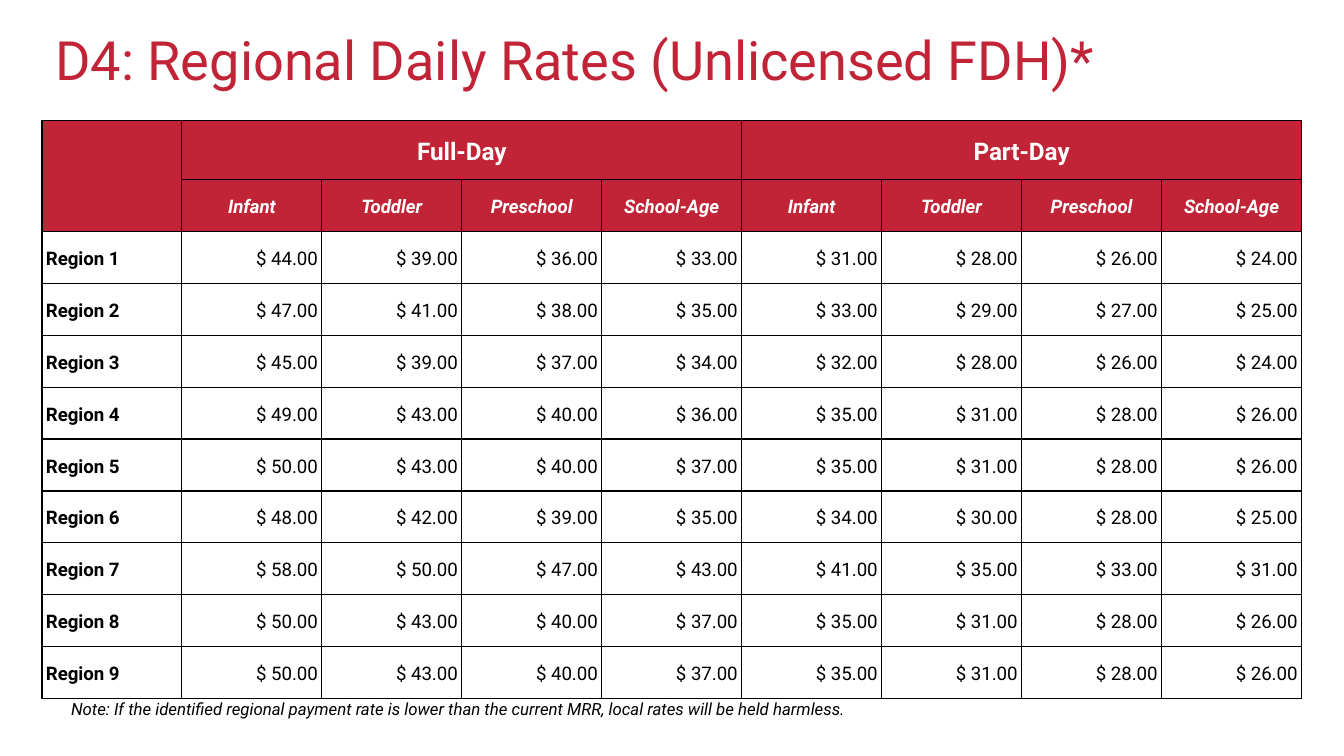
import pptx
import pptx.dml.color
import pptx.enum.text
import pptx.oxml
import pptx.oxml.ns
import pptx.util

SLIDE_WIDTH = pptx.util.Inches(10)
SLIDE_HEIGHT = SLIDE_WIDTH * 9 // 16
FONT = "Roboto"
RED, WHITE, BLACK = "C12436", "FFFFFF", "000000"
ALIGN = pptx.enum.text.PP_ALIGN
ANCHOR = pptx.enum.text.MSO_ANCHOR

DAY_TYPES = ["Full-Day", "Part-Day"]
AGE_GROUPS = ["Infant", "Toddler", "Preschool", "School-Age"]
# Daily rates by region: four full-day, then four part-day
REGION_RATES = [
    [44, 39, 36, 33, 31, 28, 26, 24],
    [47, 41, 38, 35, 33, 29, 27, 25],
    [45, 39, 37, 34, 32, 28, 26, 24],
    [49, 43, 40, 36, 35, 31, 28, 26],
    [50, 43, 40, 37, 35, 31, 28, 26],
    [48, 42, 39, 35, 34, 30, 28, 25],
    [58, 50, 47, 43, 41, 35, 33, 31],
    [50, 43, 40, 37, 35, 31, 28, 26],
    [50, 43, 40, 37, 35, 31, 28, 26],
]


def color(value):
    return pptx.dml.color.RGBColor.from_string(value)


def share_box(left, top, width, height):
    """Turn percentages of the slide into a box of lengths."""
    return (int(SLIDE_WIDTH * left / 100), int(SLIDE_HEIGHT * top / 100),
            int(SLIDE_WIDTH * width / 100), int(SLIDE_HEIGHT * height / 100))


def set_margins(target, horizontal, vertical):
    target.margin_left = target.margin_right = pptx.util.Inches(horizontal)
    target.margin_top = target.margin_bottom = pptx.util.Inches(vertical)


def write(paragraph, text, size, text_color, align=ALIGN.LEFT,
          bold=False, italic=False, spacing=None):
    paragraph.alignment = align
    paragraph.line_spacing = spacing
    run = paragraph.add_run()
    run.text = text
    run.font.name = FONT
    run.font.size = pptx.util.Pt(size)
    run.font.bold = bold
    run.font.italic = italic
    run.font.color.rgb = color(text_color)


def add_borders(cell):
    properties = cell._tc.get_or_add_tcPr()
    for side in ("lnL", "lnR", "lnT", "lnB"):
        properties.append(pptx.oxml.parse_xml(
            f'<a:{side} {pptx.oxml.ns.nsdecls("a")} w="{pptx.util.Pt(0.75)}">'
            f'<a:solidFill><a:srgbClr val="{BLACK}"/></a:solidFill></a:{side}>'))


def write_cell(cell, text, size, text_color, align, **style):
    set_margins(cell, 0.03, 0.1)
    cell.vertical_anchor = ANCHOR.BOTTOM
    write(cell.text_frame.paragraphs[0], text, size, text_color, align,
          spacing=1.15, **style)


def place_title(slide, box):
    title = slide.shapes.title
    title.left, title.top, title.width, title.height = box
    frame = title.text_frame
    frame.auto_size = pptx.enum.text.MSO_AUTO_SIZE.NONE
    frame.vertical_anchor = ANCHOR.MIDDLE
    set_margins(frame, 0.07, 0.04)
    write(frame.paragraphs[0], "D4: Regional Daily Rates (Unlicensed FDH)*",
          29, RED, spacing=0.9)


def place_rates(slide, box):
    group_size = len(AGE_GROUPS)
    column_count = 1 + len(DAY_TYPES) * group_size
    row_count = 2 + len(REGION_RATES)
    table = slide.shapes.add_table(row_count, column_count, *box).table
    table.first_row = table.horz_banding = False

    # Equal columns; the top header row is a little taller than the rest
    for column in table.columns:
        column.width = box[2] // column_count
    top_height = pptx.util.Inches(0.44)
    for index, row in enumerate(table.rows):
        row.height = (box[3] - top_height) // (row_count - 1) if index else top_height
        for cell in row.cells:
            set_margins(cell, 0, 0)
            add_borders(cell)
            if index < 2:
                cell.fill.solid()
                cell.fill.fore_color.rgb = color(RED)
            else:
                cell.fill.background()

    # Headers
    table.cell(0, 0).merge(table.cell(1, 0))
    for group, day_type in enumerate(DAY_TYPES):
        first = 1 + group * group_size
        table.cell(0, first).merge(table.cell(0, first + group_size - 1))
        write_cell(table.cell(0, first), day_type, 13, WHITE, ALIGN.CENTER, bold=True)
        for offset, age_group in enumerate(AGE_GROUPS):
            write_cell(table.cell(1, first + offset), age_group, 10, WHITE,
                       ALIGN.CENTER, bold=True, italic=True)

    # Regions and their rates
    for number, rates in enumerate(REGION_RATES, start=1):
        write_cell(table.cell(number + 1, 0), f"Region {number}", 10, BLACK,
                   ALIGN.LEFT, bold=True)
        for column, rate in enumerate(rates, start=1):
            write_cell(table.cell(number + 1, column), f"$ {rate:.2f}", 10, BLACK,
                       ALIGN.RIGHT)


def place_note(slide, box):
    frame = slide.shapes.add_textbox(*box).text_frame
    frame.word_wrap = True
    set_margins(frame, 0.1, 0.1)
    write(frame.paragraphs[0],
          "Note: If the identified regional payment rate is lower than the "
          "current MRR, local rates will be held harmless.",
          9, BLACK, italic=True)


def main():
    presentation = pptx.Presentation()
    presentation.slide_width = SLIDE_WIDTH
    presentation.slide_height = SLIDE_HEIGHT
    title_only = presentation.slide_layouts[5]
    slide = presentation.slides.add_slide(title_only)
    place_title(slide, share_box(3.4, 2.7, 93.2, 11.2))
    place_rates(slide, share_box(3.12, 15.9, 93.75, 76.3))
    place_note(slide, share_box(4.3, 91.05, 91.8, 6.2))
    presentation.save("out.pptx")


if __name__ == "__main__":
    main()
